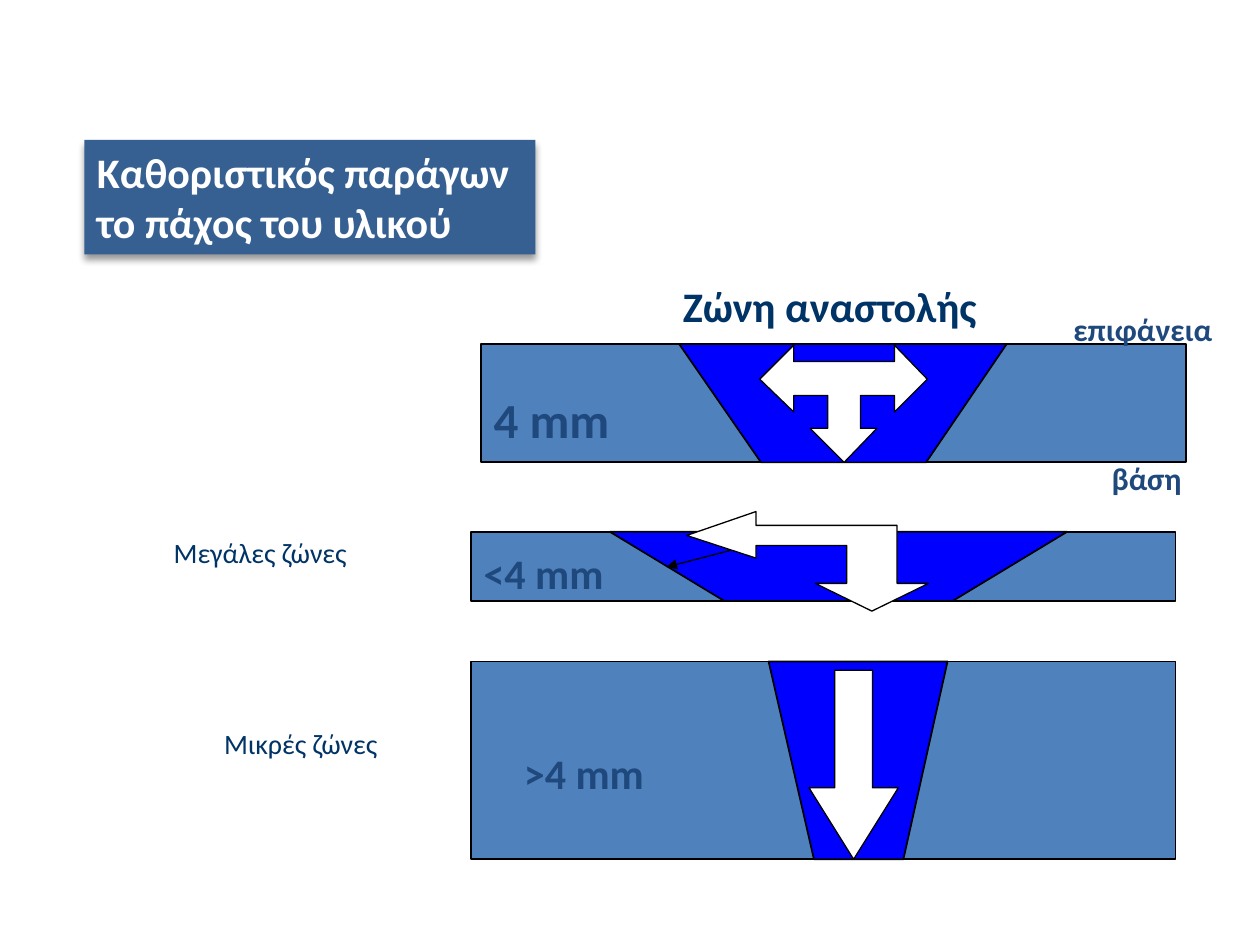
from dataclasses import dataclass

from lxml.etree import SubElement
from pptx import Presentation
from pptx.dml.color import RGBColor
from pptx.enum.shapes import MSO_CONNECTOR, MSO_SHAPE
from pptx.enum.text import MSO_ANCHOR, MSO_AUTO_SIZE, PP_ALIGN
from pptx.oxml.ns import qn
from pptx.util import Inches, Pt


@dataclass(frozen=True)
class Theme:
    font: str = "Calibri"
    band: str = "4F81BD"
    zone: str = "0000FF"
    arrow: str = "FFFFFF"
    outline: str = "000000"
    title_fill: str = "376092"
    title_text: str = "FFFFFF"
    label: str = "1F497D"
    caption: str = "003366"
    large: int = 28
    medium: int = 24
    small: int = 18
    note: int = 16
    thick: float = 1
    thin: float = 0.75


def write_text(shape, text, *, font, size, color, bold=True, align=PP_ALIGN.LEFT,
               anchor=MSO_ANCHOR.TOP, wrap=False):
    frame = shape.text_frame
    frame.word_wrap = wrap
    frame.auto_size = MSO_AUTO_SIZE.SHAPE_TO_FIT_TEXT
    frame.vertical_anchor = anchor
    frame.text = text
    for paragraph in frame.paragraphs:
        paragraph.alignment = align
        paragraph.font.name = font
        paragraph.font.size = Pt(size)
        paragraph.font.bold = bold
        paragraph.font.color.rgb = RGBColor.from_string(color)


class ZoneSlide:
    """Draws the inhibition zone diagram on one slide with one theme."""

    def __init__(self, slide, theme):
        self.shapes = slide.shapes
        self.theme = theme

    def style(self, shape, fill, line_width=None):
        shape.shadow.inherit = False
        shape.fill.solid()
        shape.fill.fore_color.rgb = RGBColor.from_string(fill)
        if line_width is None:
            shape.line.fill.background()
        else:
            shape.line.color.rgb = RGBColor.from_string(self.theme.outline)
            shape.line.width = Pt(line_width)
        return shape

    def preset(self, kind, box, fill, line_width=None):
        shape = self.shapes.add_shape(kind, *map(Inches, box))
        return self.style(shape, fill, line_width)

    def outline(self, points, fill, line_width):
        start, *rest = [(Inches(x), Inches(y)) for x, y in points]
        builder = self.shapes.build_freeform(*start)
        builder.add_line_segments(rest, close=True)
        return self.style(builder.convert_to_shape(), fill, line_width)

    def layer(self, left, top, height, zone_top, zone_base):
        theme = self.theme
        self.preset(MSO_SHAPE.RECTANGLE, (left, top, 5.59, height), theme.band, theme.thick)
        base = top + height
        corners = [(zone_top[0], top), (zone_base[0], base),
                   (zone_base[1], base), (zone_top[1], top)]
        self.outline(corners, theme.zone, theme.thick)

    def pointer(self, start, end):
        connector = self.shapes.add_connector(
            MSO_CONNECTOR.STRAIGHT, *map(Inches, start + end))
        connector.line.color.rgb = RGBColor.from_string(self.theme.outline)
        connector.line.width = Pt(self.theme.thin)
        SubElement(connector.line._get_or_add_ln(), qn("a:tailEnd"), type="triangle")
        SubElement(connector._element.spPr, qn("a:effectLst"))

    def label(self, text, box, **text_format):
        shape = self.shapes.add_textbox(*map(Inches, box))
        write_text(shape, text, font=self.theme.font, **text_format)

    def title(self, text, box):
        theme = self.theme
        shape = self.preset(MSO_SHAPE.RECTANGLE, box, theme.title_fill)
        effects = shape._element.spPr.find(qn("a:effectLst"))
        shadow = SubElement(effects, qn("a:outerShdw"), blurRad=str(Pt(4)),
                            dist=str(Pt(3)), dir="5400000", rotWithShape="0")
        color = SubElement(shadow, qn("a:srgbClr"), val=theme.outline)
        SubElement(color, qn("a:alpha"), val="40000")
        write_text(shape, text, font=theme.font, size=theme.medium, color=theme.title_text)


LAYERS = [
    (3.82, 2.73, 0.94, (5.39, 7.99), (6.04, 7.35)),
    (3.74, 4.22, 0.55, (4.84, 8.47), (5.75, 7.56)),
    (3.74, 5.25, 1.57, (6.10, 7.52), (6.46, 7.17)),
]
THREE_WAY_ARROW = [
    (6.7, 3.67), (6.96, 3.4), (6.83, 3.4), (6.83, 3.14), (7.1, 3.14), (7.1, 3.27),
    (7.36, 3.01), (7.1, 2.74), (7.1, 2.87), (6.3, 2.87), (6.3, 2.74), (6.03, 3.01),
    (6.3, 3.27), (6.3, 3.14), (6.57, 3.14), (6.57, 3.4), (6.43, 3.4),
]
LEFT_DOWN_ARROW = [
    (5.45, 4.25), (6, 4.43), (6, 4.33), (6.72, 4.33), (6.72, 4.63), (6.47, 4.63),
    (6.92, 4.85), (7.37, 4.63), (7.12, 4.63), (7.12, 4.17), (6, 4.17), (6, 4.06),
]


def main():
    presentation = Presentation()
    presentation.slide_width, presentation.slide_height = Inches(10), Inches(7.5)
    theme = Theme()
    diagram = ZoneSlide(presentation.slides.add_slide(presentation.slide_layouts[6]), theme)

    for layer in LAYERS:
        diagram.layer(*layer)
    diagram.pointer((6.37, 4.22), (5.29, 4.5))

    for text, box, size in [
        ("4 mm", (3.82, 3.04, 1.42, 0.57), theme.large),
        ("<4 mm", (3.74, 4.3, 1.73, 0.5), theme.medium),
        (">4 mm", (4.06, 5.88, 1.42, 0.5), theme.medium),
    ]:
        diagram.label(text, box, size=size, color=theme.label, wrap=True)

    for points in (THREE_WAY_ARROW, LEFT_DOWN_ARROW):
        diagram.outline(points, theme.arrow, theme.thin)
    down_arrow = diagram.preset(
        MSO_SHAPE.DOWN_ARROW, (6.42, 5.32, 0.71, 1.5), theme.arrow, theme.thin)
    down_arrow.adjustments[0] = 0.42
    down_arrow.adjustments[1] = 0.8

    diagram.title("Καθοριστικός παράγων\nτο πάχος του υλικού", (0.67, 1.11, 3.58, 0.91))
    for text, box in [
        ("Μεγάλες ζώνες", (1.28, 4.2, 1.59, 0.37)),
        ("Μικρές ζώνες", (1.68, 5.72, 1.43, 0.37)),
    ]:
        diagram.label(text, box, size=theme.note, color=theme.caption, bold=False)
    for text, box, size, color in [
        ("Ζώνη αναστολής", (5.31, 2.18, 2.55, 0.5), theme.medium, theme.caption),
        ("επιφάνεια", (8.41, 2.41, 1.32, 0.4), theme.small, theme.label),
        ("βάση", (8.72, 3.59, 0.76, 0.4), theme.small, theme.label),
    ]:
        diagram.label(text, box, size=size, color=color, align=PP_ALIGN.CENTER)

    presentation.save("out.pptx")


if __name__ == "__main__":
    main()
